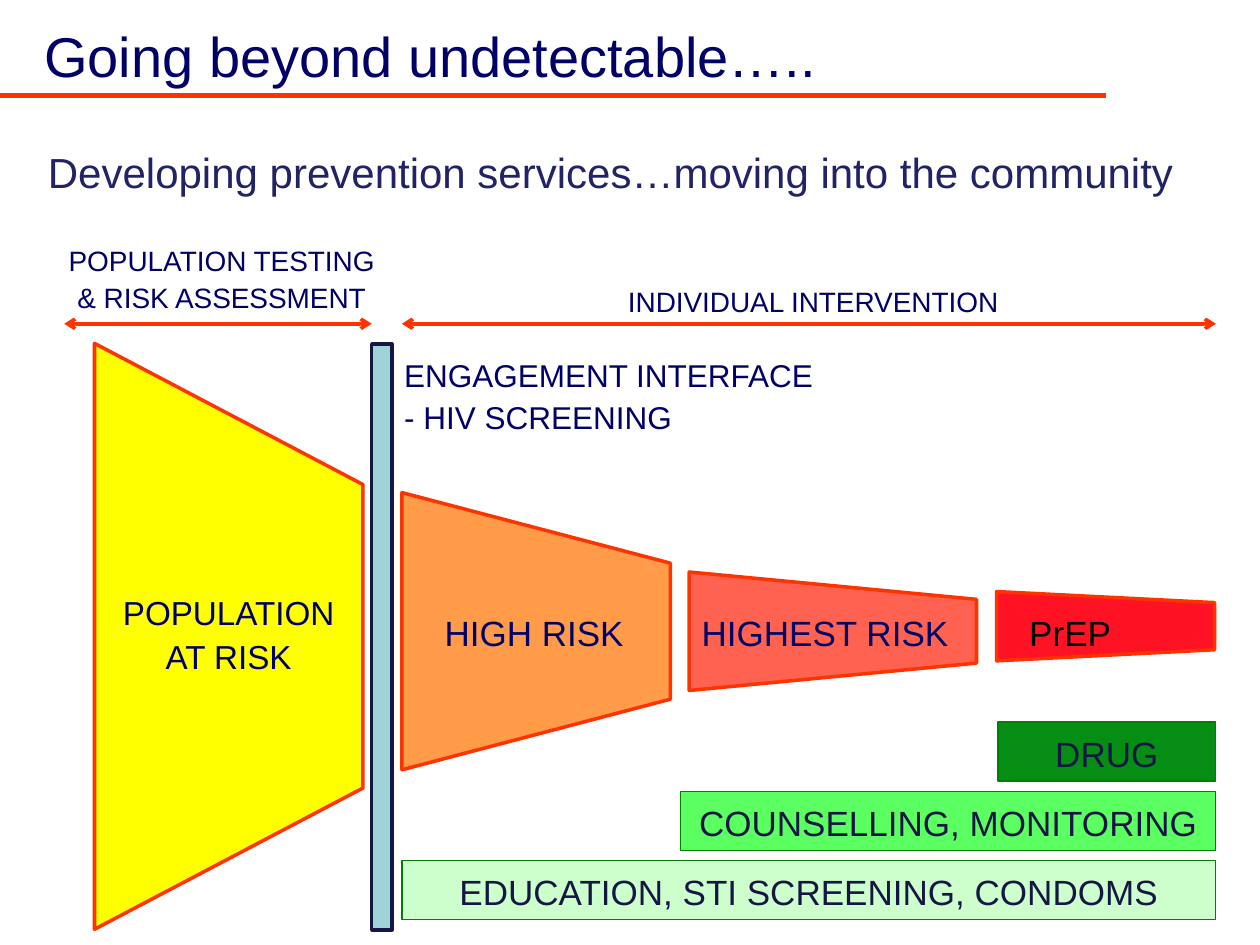
from lxml import etree
from pptx import Presentation
from pptx.dml.color import RGBColor
from pptx.enum import shapes, text
from pptx.oxml import ns
from pptx.util import Inches, Pt

COLOURS = {
    "navy": "000066", "indigo": "222267", "ink": "161645", "black": "000000",
    "red_line": "FF3300", "yellow": "FFFF00", "orange": "FF9B49",
    "coral": "FF6251", "red": "FF1223", "teal": "9ED3D7", "green_line": "008000",
    "dark_green": "068E14", "green": "5CFF61", "pale_green": "CCFFCC",
}
RIGHT_EDGE = 9.65


def colour(name):
    return RGBColor.from_string(COLOURS[name])


def write(shape, content, size=20, color="navy", centred=False, wrap=False):
    """Fill a shape with one paragraph per line of content."""
    frame = shape.text_frame
    frame.text = content
    frame.word_wrap = wrap
    frame.auto_size = text.MSO_AUTO_SIZE.SHAPE_TO_FIT_TEXT
    frame.vertical_anchor = text.MSO_ANCHOR.TOP
    for paragraph in frame.paragraphs:
        properties = paragraph._p.get_or_add_pPr()
        properties.set("marL", "0")
        properties.set("indent", "0")
        etree.SubElement(properties, ns.qn("a:buNone"))
        paragraph.alignment = text.PP_ALIGN.CENTER if centred else text.PP_ALIGN.LEFT
        paragraph.line_spacing = 1.1
        paragraph.space_before = Pt(0)
        for run in paragraph.runs:
            run.font.name = "Arial"
            run.font.size = Pt(size)
            run.font.color.rgb = colour(color)


class RiskSlide:
    def __init__(self, presentation):
        self.slide = presentation.slides.add_slide(presentation.slide_layouts[1])
        self.shapes = self.slide.shapes

    def placeholder(self, index, box, content, **style):
        shape = self.slide.placeholders[index]
        shape.left, shape.top, shape.width, shape.height = map(Inches, box)
        write(shape, content, **style)

    def label(self, box, content, **style):
        write(self.shapes.add_textbox(*map(Inches, box)), content, **style)

    def block(self, kind, box, fill, line, weight):
        shape = self.shapes.add_shape(kind, *map(Inches, box))
        shape.shadow.inherit = False
        shape.fill.solid()
        shape.fill.fore_color.rgb = colour(fill)
        shape.line.color.rgb = colour(line)
        shape.line.width = Pt(weight)
        return shape

    def funnel(self, left, middle, length, height, taper, fill):
        """Trapezoid turned so that its narrow end points right."""
        box = (left + (length - height) / 2, middle - length / 2, height, length)
        shape = self.block(shapes.MSO_SHAPE.TRAPEZOID, box, fill, "red_line", 2)
        shape.adjustments[0] = taper
        shape.rotation = 90

    def bar(self, top, width, fill, content):
        box = (RIGHT_EDGE - width, top, width, 0.47)
        shape = self.block(shapes.MSO_SHAPE.RECTANGLE, box, fill, "green_line", 0.75)
        write(shape, content, color="ink", centred=True, wrap=True)

    def rule(self, start, end, y, weight, arrows=False):
        line = self.shapes.add_connector(
            shapes.MSO_CONNECTOR.STRAIGHT, Inches(start), Inches(y), Inches(end), Inches(y))
        line.line.color.rgb = colour("red_line")
        line.line.width = Pt(weight)
        if arrows:
            for end_tag in ("a:headEnd", "a:tailEnd"):
                etree.SubElement(line.line._get_or_add_ln(), ns.qn(end_tag), type="arrow")
        etree.SubElement(line._element.spPr, ns.qn("a:effectLst"))


def main():
    presentation = Presentation()
    presentation.slide_width, presentation.slide_height = Inches(10), Inches(7.5)
    page = RiskSlide(presentation)

    # Heading
    page.placeholder(0, (0.25, 0.07, 6.39, 0.68), "Going beyond undetectable…..", size=32)
    page.placeholder(1, (0.28, 1.07, 9.22, 0.54),
                     "Developing prevention services…moving into the community",
                     size=24, color="indigo")
    page.rule(0, 8.78, 0.76, 3)

    # Narrowing funnel: left, middle, length, height, taper, fill
    for stage in (
        (0.75, 5.05, 2.13, 4.65, 0.526, "yellow"),
        (3.19, 5.01, 2.13, 2.2, 0.263, "orange"),
        (5.47, 5.01, 2.28, 0.94, 0.231, "coral"),
        (7.91, 4.97, 1.73, 0.55, 0.16, "red"),
    ):
        page.funnel(*stage)
    page.label((0.83, 4.62, 1.97, 0.78), "POPULATION AT RISK", size=19, centred=True, wrap=True)
    for left, width, name, color in (
        (3.43, 1.64, "HIGH RISK", "navy"),
        (5.47, 2.18, "HIGHEST RISK", "navy"),
        (8.07, 0.85, "PrEP", "black"),
    ):
        page.label((left, 4.77, width, 0.47), name, color=color)

    # Engagement interface
    page.block(shapes.MSO_SHAPE.RECTANGLE, (2.95, 2.73, 0.16, 4.65), "teal", "ink", 2)
    page.label((3.11, 2.75, 3.48, 0.76), "ENGAGEMENT INTERFACE\n- HIV SCREENING", size=18)

    # Phases above the funnel
    page.label((0.4, 1.86, 2.72, 0.69), "POPULATION TESTING\n& RISK ASSESSMENT",
               size=16, centred=True)
    page.label((3.5, 2.18, 5.91, 0.39), "INDIVIDUAL INTERVENTION",
               size=16, centred=True, wrap=True)
    for start, end in ((0.51, 2.95), (3.19, RIGHT_EDGE)):
        page.rule(start, end, 2.57, 2, arrows=True)

    # Services, each wider than the one above
    for row, (width, fill, name) in enumerate((
        (1.73, "dark_green", "DRUG"),
        (4.25, "green", "COUNSELLING, MONITORING"),
        (6.46, "pale_green", "EDUCATION, STI SCREENING, CONDOMS"),
    )):
        page.bar(5.73 + 0.55 * row, width, fill, name)

    presentation.save("out.pptx")


if __name__ == "__main__":
    main()
